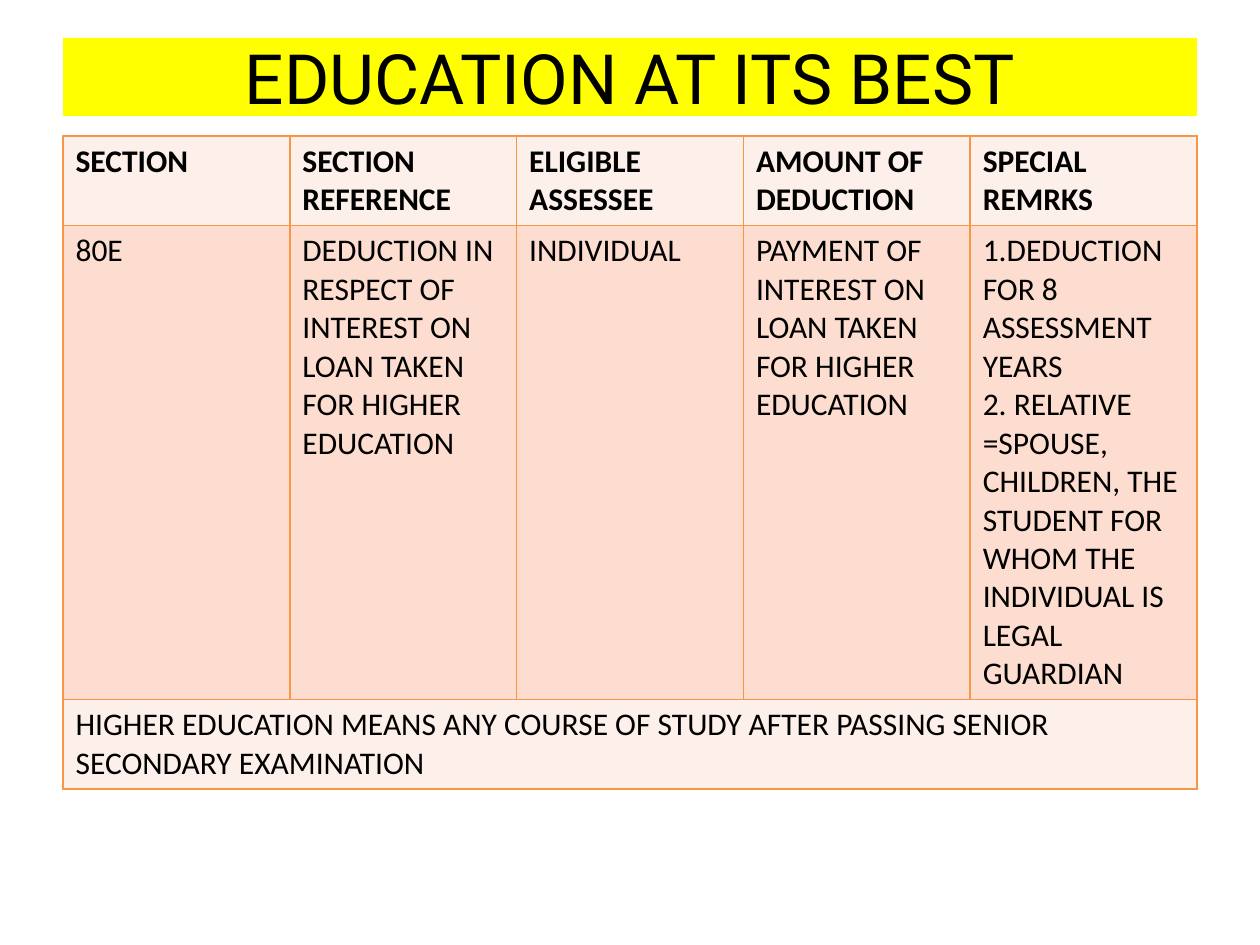
from lxml import etree
from pptx import Presentation
from pptx.dml.color import RGBColor
from pptx.enum import text
from pptx.oxml import ns
from pptx.util import Inches, Pt

BLACK = RGBColor(0x00, 0x00, 0x00)
YELLOW = RGBColor(0xFF, 0xFF, 0x00)
ORANGE = RGBColor(0xF7, 0x96, 0x46)
LIGHT_PEACH = RGBColor(0xFD, 0xEF, 0xE9)
PEACH = RGBColor(0xFC, 0xDD, 0xCF)

LEFT, WIDTH = Inches(0.5), Inches(9)
ROW_HEIGHTS = [Inches(0.7), Inches(3.7), Inches(0.7)]
ROW_FILLS = [LIGHT_PEACH, PEACH, LIGHT_PEACH]

# Each cell is a list of paragraphs.
HEADINGS = [
    ["SECTION"],
    ["SECTION REFERENCE"],
    ["ELIGIBLE ASSESSEE"],
    ["AMOUNT OF DEDUCTION"],
    ["SPECIAL REMRKS"],
]
DEDUCTION = [
    ["80E"],
    ["DEDUCTION IN RESPECT OF INTEREST ON LOAN TAKEN FOR HIGHER EDUCATION"],
    ["INDIVIDUAL"],
    ["PAYMENT OF INTEREST ON LOAN TAKEN FOR HIGHER EDUCATION"],
    [
        "1.DEDUCTION FOR 8 ASSESSMENT YEARS",
        "2. RELATIVE =SPOUSE, CHILDREN, THE STUDENT FOR WHOM THE "
        "INDIVIDUAL IS LEGAL GUARDIAN",
    ],
]
DEFINITION = [
    ["HIGHER EDUCATION MEANS ANY COURSE OF STUDY AFTER PASSING SENIOR "
     "SECONDARY EXAMINATION"],
]


def add_span(para, wording, font, size, bold=False):
    span = para.add_run()
    span.text = wording
    span.font.name = font
    span.font.size = Pt(size)
    span.font.bold = bold
    span.font.color.rgb = BLACK


def add_title(page, wording):
    title = page.shapes.title
    title.left, title.top = LEFT, Inches(0.3)
    title.width, title.height = WIDTH, Inches(0.62)
    title.fill.solid()
    title.fill.fore_color.rgb = YELLOW
    frame = title.text_frame
    frame.auto_size = text.MSO_AUTO_SIZE.NONE
    frame.vertical_anchor = text.MSO_ANCHOR.MIDDLE
    para = frame.paragraphs[0]
    para.alignment = text.PP_ALIGN.CENTER
    add_span(para, wording, "Roboto", 39.6)


def add_borders(cell):
    properties = cell._tc.get_or_add_tcPr()
    for side in ("a:lnL", "a:lnR", "a:lnT", "a:lnB"):
        line = etree.SubElement(properties, ns.qn(side), w=str(Pt(1)))
        fill = etree.SubElement(line, ns.qn("a:solidFill"))
        etree.SubElement(fill, ns.qn("a:srgbClr"), val=str(ORANGE))


def fill_cell(cell, paragraphs, bold):
    frame = cell.text_frame
    for index, wording in enumerate(paragraphs):
        para = frame.add_paragraph() if index else frame.paragraphs[0]
        add_span(para, wording, "Calibri", 18, bold)


def add_deduction_table(page):
    rows = [HEADINGS, DEDUCTION, DEFINITION]
    table = page.shapes.add_table(
        len(rows), len(HEADINGS), LEFT, Inches(1.08), WIDTH, sum(ROW_HEIGHTS)
    ).table
    for row, height, color in zip(table.rows, ROW_HEIGHTS, ROW_FILLS):
        row.height = height
        for cell in row.cells:
            add_borders(cell)
            cell.fill.solid()
            cell.fill.fore_color.rgb = color
    last = len(rows) - 1
    table.cell(last, 0).merge(table.cell(last, len(HEADINGS) - 1))
    for index, contents in enumerate(rows):
        for column, paragraphs in enumerate(contents):
            fill_cell(table.cell(index, column), paragraphs, bold=index == 0)


def main():
    deck = Presentation()
    deck.slide_width, deck.slide_height = Inches(10), Inches(7.5)
    page = deck.slides.add_slide(deck.slide_layouts.get_by_name("Title Only"))
    add_title(page, "EDUCATION AT ITS BEST")
    add_deduction_table(page)
    deck.save("out.pptx")


if __name__ == "__main__":
    main()
